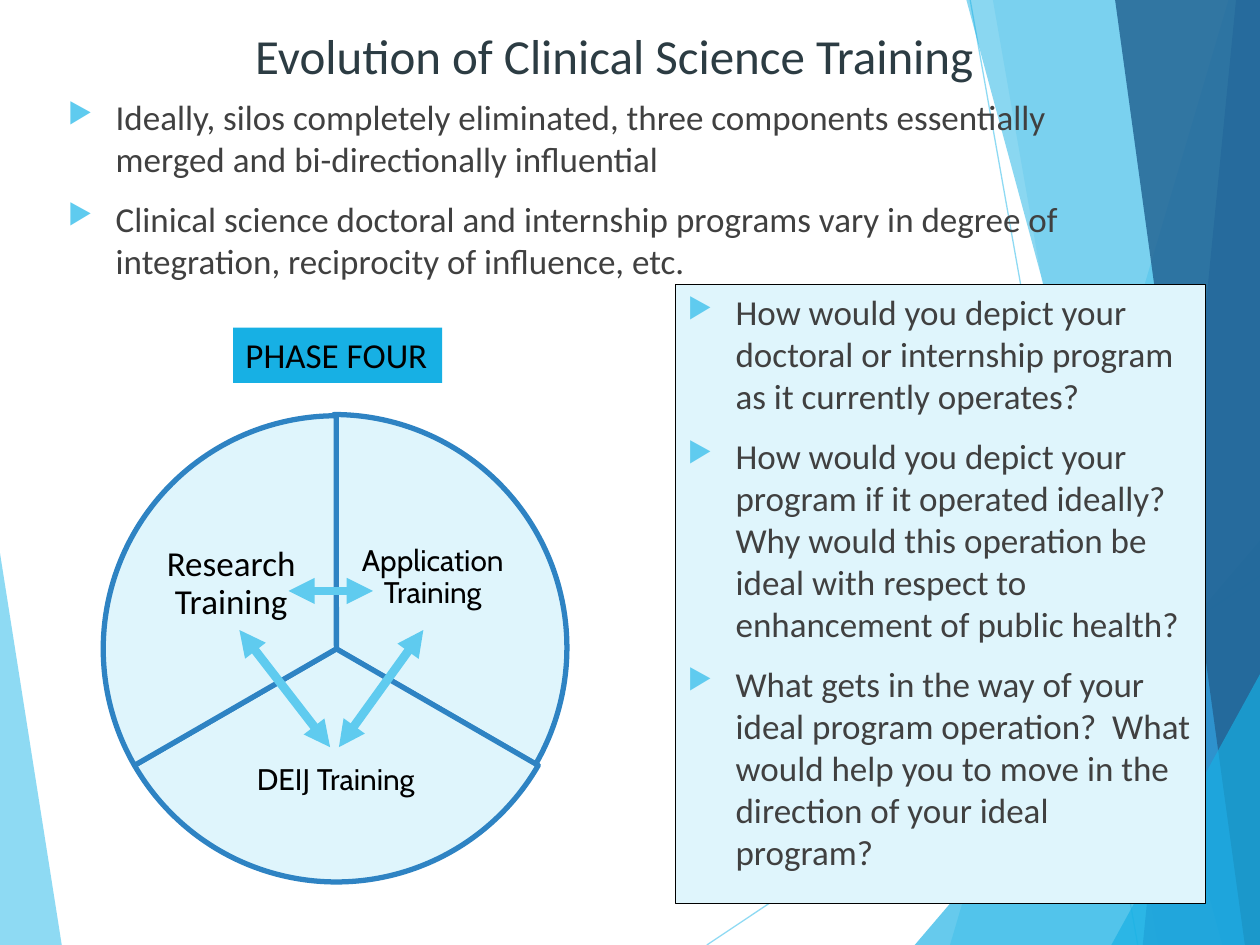
"""Build the slide on the evolution of clinical science training."""
import lxml.etree
import pptx
import pptx.dml.color
import pptx.enum.shapes
import pptx.enum.text
import pptx.oxml.ns
import pptx.util

Inches = pptx.util.Inches
Pt = pptx.util.Pt
qn = pptx.oxml.ns.qn
Kind = pptx.enum.shapes.MSO_SHAPE
Link = pptx.enum.shapes.MSO_CONNECTOR
Fit = pptx.enum.text.MSO_AUTO_SIZE
top = pptx.enum.text.MSO_ANCHOR.TOP
middle = pptx.enum.text.MSO_ANCHOR.MIDDLE
left = pptx.enum.text.PP_ALIGN.LEFT
center = pptx.enum.text.PP_ALIGN.CENTER


def tint(fill, hue):
    """Give a fill one solid colour."""
    fill.solid()
    fill.fore_color.rgb = pptx.dml.color.RGBColor.from_string(hue)


def write(shape, lines, size, hue, look, para, face="Calibri", mark=None):
    """Fill a shape with paragraphs in one format."""
    frame = shape.text_frame
    for name, value in look.items():
        setattr(frame, name, value)
    frame.text = "\n".join(lines)
    for item in frame.paragraphs:
        for name, value in para.items():
            setattr(item, name, value)
        font = item.runs[0].font
        for name, value in {"size": Pt(size), "name": face}.items():
            setattr(font, name, value)
        tint(font.fill, hue)
        if mark:
            props = item._p.get_or_add_pPr()
            props.set("marL", str(Inches(0.38)))
            props.set("indent", str(Inches(-0.38)))
            paint = lxml.etree.SubElement(props, qn("a:buClr"))
            lxml.etree.SubElement(paint, qn("a:srgbClr"), val=mark)
            lxml.etree.SubElement(props, qn("a:buSzPct"), val="80000")
            lxml.etree.SubElement(props, qn("a:buChar"), char="▶")


sky, blue, steel, navy = "5FCBEF", "17B0E4", "2E83C3", "226292"
pale, black, gray, slate = "DFF5FC", "000000", "404040", "2C3C43"

deck = pptx.Presentation()
deck.slide_width, deck.slide_height = Inches(10), Inches(7.5)
shapes = deck.slides.add_slide(deck.slide_layouts[6]).shapes

facets = [
    (sky, 70, [(0, 4.39), (0.49, 7.5), (0, 7.5)]),
    (sky, 70, [(5.61, 7.5), (10, 4.57)]),
    (sky, 70, [(7.7, 0), (9.03, 7.5)]),
    (sky, 36, [(9.75, 0), (7.54, 7.5), (10, 7.5), (10, 0)]),
    (sky, 20, [(7.88, 0), (9.19, 7.5), (10, 7.5), (10, 0)]),
    (blue, 66, [(7.26, 7.5), (10, 4.29), (10, 7.5)]),
    (blue, 50, [(7.67, 0), (9.7, 7.5), (10, 7.5), (10, 0)]),
    (steel, 70, [(9.81, 0), (9.07, 7.5), (10, 7.5), (10, 0)]),
    (navy, 82, [(8.85, 0), (9.88, 7.5), (10, 7.5), (10, 0)]),
    (blue, 66, [(8.82, 7.5), (10, 5.35), (10, 7.5)]),
]
for hue, alpha, points in facets:
    spots = [(Inches(x), Inches(y)) for x, y in points]
    if len(spots) == 2:
        shape = shapes.add_connector(Link.STRAIGHT, *spots[0], *spots[1])
        shape.line.width = Pt(0.75)
        tint(shape.line.fill, hue)
        lxml.etree.SubElement(shape.element.spPr, qn("a:effectLst"))
    else:
        pen = shapes.build_freeform(*spots[0])
        pen.add_line_segments(spots[1:], close=True)
        shape = pen.convert_to_shape()
        shape.shadow.inherit = False
        shape.line.fill.background()
        tint(shape.fill, hue)
    paint = next(shape.element.iter(qn("a:srgbClr")))
    lxml.etree.SubElement(paint, qn("a:alpha"), val=str(alpha * 1000))

title = shapes.add_textbox(Inches(0.31), Inches(0.15), Inches(9.13), Inches(0.73))
write(title, ["Evolution of Clinical Science Training"], 28, slate,
      {"word_wrap": True}, {"alignment": center})

slices = [
    ((0.8, 3.29), (162, 18), "Application Training", (2.81, 3.97, 1.25, 1.23), 17, "Cabin", 0.02),
    ((0.82, 3.3), (18, 90), "DEIJ Training", (1.83, 5.63, 1.67, 1.14), 17, "Cabin", 0.02),
    ((0.82, 3.3), (90, 162), "Research Training", (1.21, 4.02, 1.25, 1.23), 20, "Calibri", 0.03),
]
for spot, turns, label, area, size, face, inset in slices:
    pie = shapes.add_shape(Kind.PIE, *map(Inches, spot), Inches(3.7), Inches(3.7))
    pie.shadow.inherit = False
    for index, turn in enumerate(turns):
        pie.adjustments[index] = turn
    tint(pie.fill, pale)
    tint(pie.line.fill, steel)
    pie.line.width = Pt(3)
    look = {f"margin_{side}": Inches(inset) for side in ("left", "top", "right", "bottom")}
    look.update(word_wrap=True, vertical_anchor=middle)
    box = shapes.add_textbox(*map(Inches, area))
    write(box, [label], size, black, look, {"alignment": center, "line_spacing": 0.9}, face)

for ends in [(1.9, 5, 2.62, 5.93), (2.29, 4.69, 2.96, 4.69), (3.36, 5, 2.69, 5.93)]:
    arrow = shapes.add_connector(Link.STRAIGHT, *map(Inches, ends))
    arrow.line.width = Pt(5)
    tint(arrow.line.fill, sky)
    edge = arrow.element.spPr.find(qn("a:ln"))
    for tip in ("a:headEnd", "a:tailEnd"):
        lxml.etree.SubElement(edge, qn(tip), type="triangle")
    lxml.etree.SubElement(arrow.element.spPr, qn("a:effectLst"))

look = {"word_wrap": True, "vertical_anchor": top}
para = {"alignment": left, "space_before": Pt(10)}
intro = shapes.add_textbox(Inches(0.44), Inches(0.71), Inches(8.63), Inches(1.55))
write(intro, [
    "Ideally, silos completely eliminated, three components essentially merged and bi-directionally influential",
    "Clinical science doctoral and internship programs vary in degree of integration, reciprocity of influence, etc.",
], 20, gray, look, para, mark=sky)

phase = shapes.add_shape(Kind.RECTANGLE, Inches(1.85), Inches(2.6), Inches(1.66), Inches(0.44))
phase.shadow.inherit = False
tint(phase.fill, blue)
phase.line.fill.background()
write(phase, ["PHASE FOUR"], 20, black,
      {"word_wrap": False, "auto_size": Fit.SHAPE_TO_FIT_TEXT, "vertical_anchor": top},
      {"alignment": left})

panel = shapes.add_shape(Kind.RECTANGLE, Inches(5.36), Inches(2.26), Inches(4.21), Inches(4.91))
panel.shadow.inherit = False
tint(panel.fill, pale)
tint(panel.line.fill, black)
panel.line.width = Pt(0.75)
write(panel, [
    "How would you depict your doctoral or internship program as it currently operates?",
    "How would you depict your program if it operated ideally?  Why would this operation be ideal "
    "with respect to enhancement of public health?",
    "What gets in the way of your ideal program operation?  What would help you to move in the "
    "direction of your ideal program?",
], 20, gray, look, para, mark=sky)

deck.save("out.pptx")
